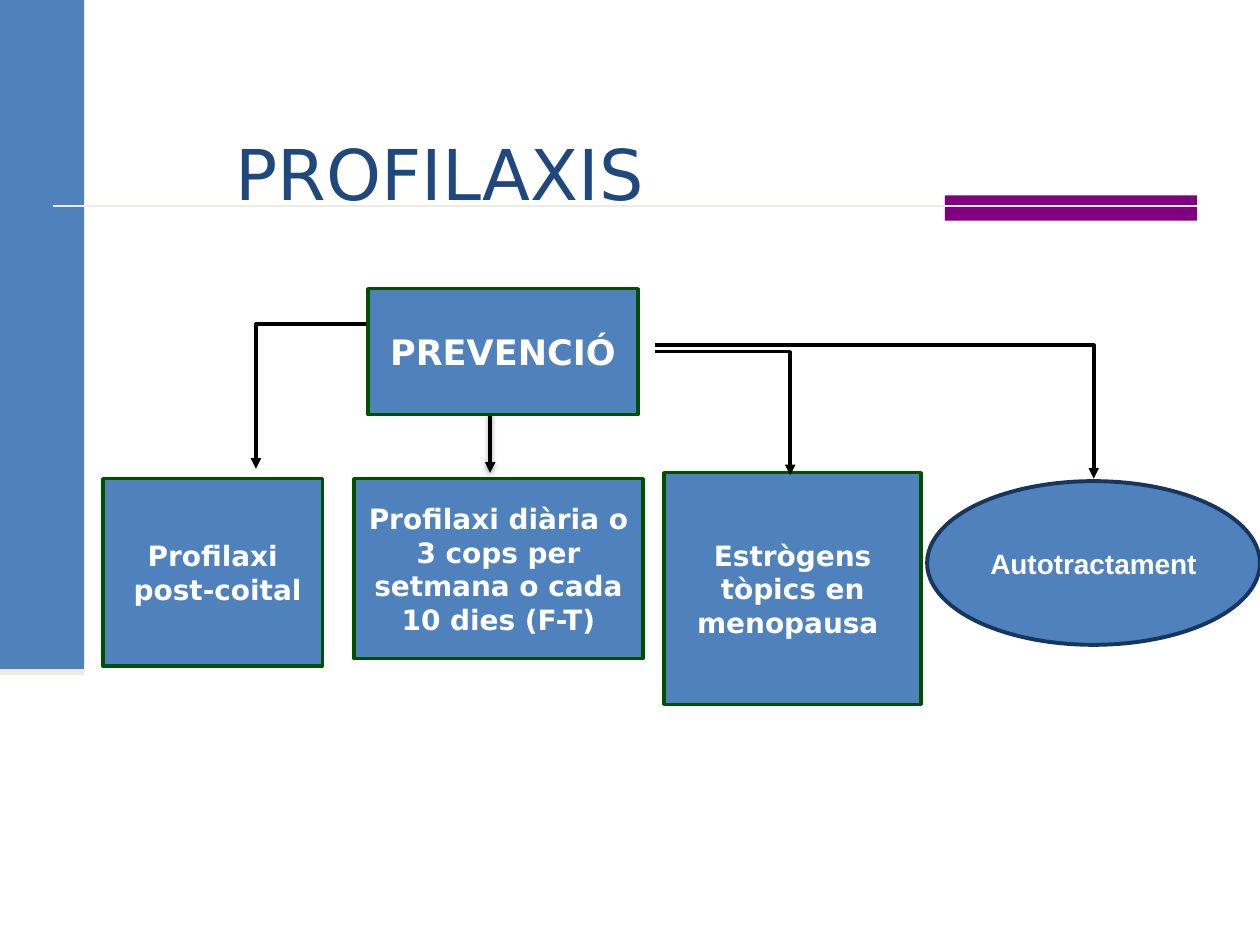
from dataclasses import dataclass

from lxml import etree
from pptx import Presentation
from pptx.dml.color import RGBColor
from pptx.enum import shapes, text
from pptx.oxml import ns
from pptx.util import Cm, Pt

BLUE = RGBColor(0x4F, 0x81, 0xBD)
NAVY = RGBColor(0x17, 0x36, 0x5D)
TITLE_BLUE = RGBColor(0x1F, 0x49, 0x7D)
GREEN = RGBColor(0x00, 0x50, 0x00)
PURPLE = RGBColor(0x80, 0x00, 0x80)
CREAM = RGBColor(0xEE, 0xEC, 0xE1)
BLACK = RGBColor(0x00, 0x00, 0x00)
WHITE = RGBColor(0xFF, 0xFF, 0xFF)

RECT = shapes.MSO_SHAPE.RECTANGLE
OVAL = shapes.MSO_SHAPE.OVAL
Point = tuple[float, float]


@dataclass(frozen=True)
class Node:
    """A diagram box; lengths in centimetres."""
    left: float
    top: float
    width: float
    height: float
    lines: tuple[str, ...]
    size: int = 16
    font: str = "DejaVu Sans"
    form: int = RECT
    border: RGBColor = GREEN
    border_width: float = 2


TREATMENTS = (
    Node(2.08, 9.65, 4.42, 3.78, ("Profilaxi", " post-coital")),
    Node(7.14, 9.65, 5.82, 3.63,
         ("Profilaxi diària o 3 cops per setmana o cada 10 dies (F-T)",)),
    Node(18.69, 9.7, 6.71, 3.3, ("Autotractament",), font="Arial",
         form=OVAL, border=NAVY, border_width=2.25),
    Node(13.39, 9.53, 5.18, 4.67, ("Estrògens tòpics en menopausa ",)),
)
PREVENTION = Node(7.42, 5.82, 5.44, 2.54, ("PREVENCIÓ",), size=20)

# Each elbow runs level from its start, then down to its end.
ELBOWS: tuple[tuple[Point, Point], ...] = (
    ((7.57, 6.53), (5.16, 9.45)),
    ((13.21, 6.96), (22.05, 9.65)),
    ((13.21, 7.09), (15.93, 9.58)),
)


def add_run(paragraph, wording: str, font: str, size: int,
            color: RGBColor, bold: bool = False) -> None:
    run = paragraph.add_run()
    run.text = wording
    run.font.name = font
    run.font.size = Pt(size)
    run.font.bold = bold
    run.font.color.rgb = color


def add_block(slide, form: int, left: float, top: float, width: float,
              height: float, color: RGBColor):
    block = slide.shapes.add_shape(form, Cm(left), Cm(top), Cm(width), Cm(height))
    block.shadow.inherit = False
    block.fill.solid()
    block.fill.fore_color.rgb = color
    block.line.fill.background()
    return block


def add_node(slide, node: Node) -> None:
    box = add_block(slide, node.form, node.left, node.top,
                    node.width, node.height, BLUE)
    box.line.color.rgb = node.border
    box.line.width = Pt(node.border_width)
    frame = box.text_frame
    frame.word_wrap = True
    frame.vertical_anchor = text.MSO_ANCHOR.MIDDLE
    for index, wording in enumerate(node.lines):
        paragraph = frame.add_paragraph() if index else frame.paragraphs[0]
        paragraph.alignment = text.PP_ALIGN.CENTER
        add_run(paragraph, wording, node.font, node.size, WHITE, bold=True)


def add_arrowhead(arrow) -> None:
    outline = arrow._element.spPr.get_or_add_ln()
    etree.SubElement(outline, ns.qn("a:tailEnd"), type="triangle")


def add_line(slide, start: Point, end: Point, color: RGBColor, width: float):
    """Draw a straight line and return it with its empty effect list."""
    line = slide.shapes.add_connector(
        shapes.MSO_CONNECTOR.STRAIGHT,
        Cm(start[0]), Cm(start[1]), Cm(end[0]), Cm(end[1]))
    line.line.color.rgb = color
    line.line.width = Pt(width)
    effects = etree.SubElement(line._element.spPr, ns.qn("a:effectLst"))
    return line, effects


def add_shadowed_arrow(slide, start: Point, end: Point) -> None:
    arrow, effects = add_line(slide, start, end, BLACK, 2)
    add_arrowhead(arrow)
    shadow = etree.SubElement(
        effects, ns.qn("a:outerShdw"), blurRad=str(int(Pt(3.1))),
        dist=str(int(Pt(1.6))), dir="5400000", rotWithShape="0")
    shade = etree.SubElement(shadow, ns.qn("a:srgbClr"), val=str(BLACK))
    etree.SubElement(shade, ns.qn("a:alpha"), val="38000")


def add_elbow(slide, start: Point, end: Point) -> None:
    builder = slide.shapes.build_freeform(Cm(start[0]), Cm(start[1]))
    builder.add_line_segments(
        [(Cm(end[0]), Cm(start[1])), (Cm(end[0]), Cm(end[1]))], close=False)
    elbow = builder.convert_to_shape()
    elbow.shadow.inherit = False
    elbow.fill.background()
    elbow.line.color.rgb = BLACK
    elbow.line.width = Pt(2)
    add_arrowhead(elbow)


def add_title(slide) -> None:
    title = slide.shapes.add_textbox(Cm(4.5), Cm(2.51), Cm(18.24), Cm(11.2))
    title.text_frame.word_wrap = True
    add_run(title.text_frame.paragraphs[0], "PROFILAXIS", "DejaVu Sans",
            40, TITLE_BLUE)


def add_decoration(slide) -> None:
    add_block(slide, RECT, 0, 0, 1.7, 13.54, BLUE)
    add_block(slide, RECT, 19.05, 3.94, 5.08, 0.51, PURPLE)
    add_line(slide, (1.07, 4.15), (24.13, 4.15), CREAM, 1.5)
    add_line(slide, (0, 13.54), (1.7, 13.54), CREAM, 3.5)


def main() -> None:
    deck = Presentation()
    deck.slide_width, deck.slide_height = Cm(25.4), Cm(19.05)
    slide = deck.slides.add_slide(deck.slide_layouts[6])
    add_decoration(slide)
    add_title(slide)
    for treatment in TREATMENTS:
        add_node(slide, treatment)
    for start, end in ELBOWS:
        add_elbow(slide, start, end)
    add_shadowed_arrow(slide, (9.88, 8.26), (9.88, 9.53))
    add_node(slide, PREVENTION)
    deck.save("out.pptx")


if __name__ == "__main__":
    main()
